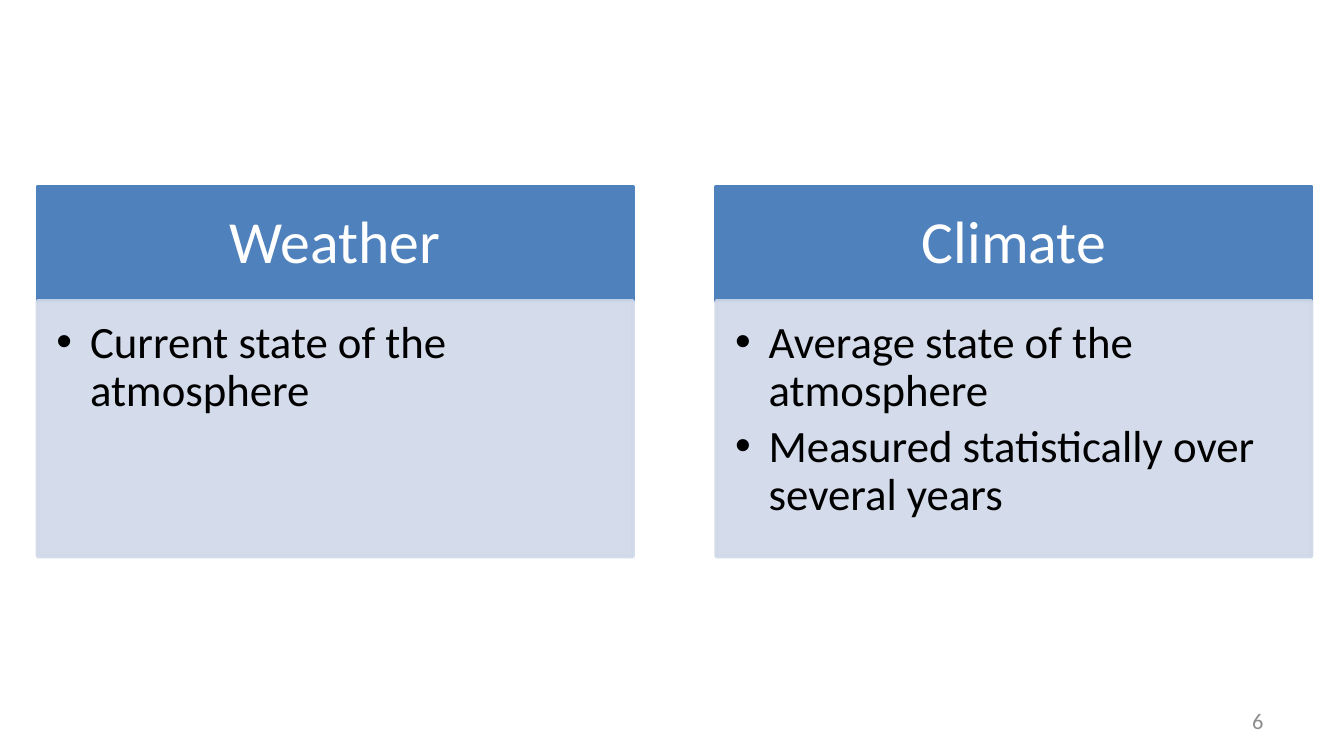
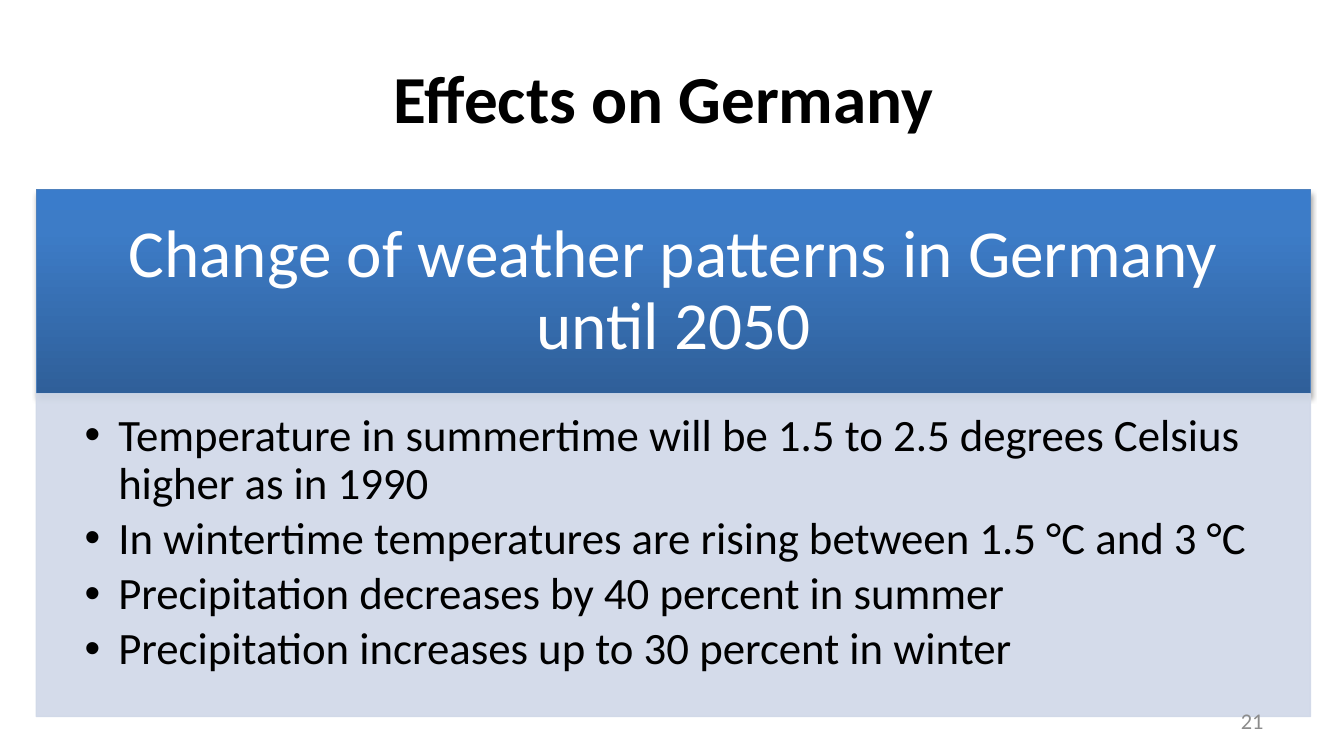
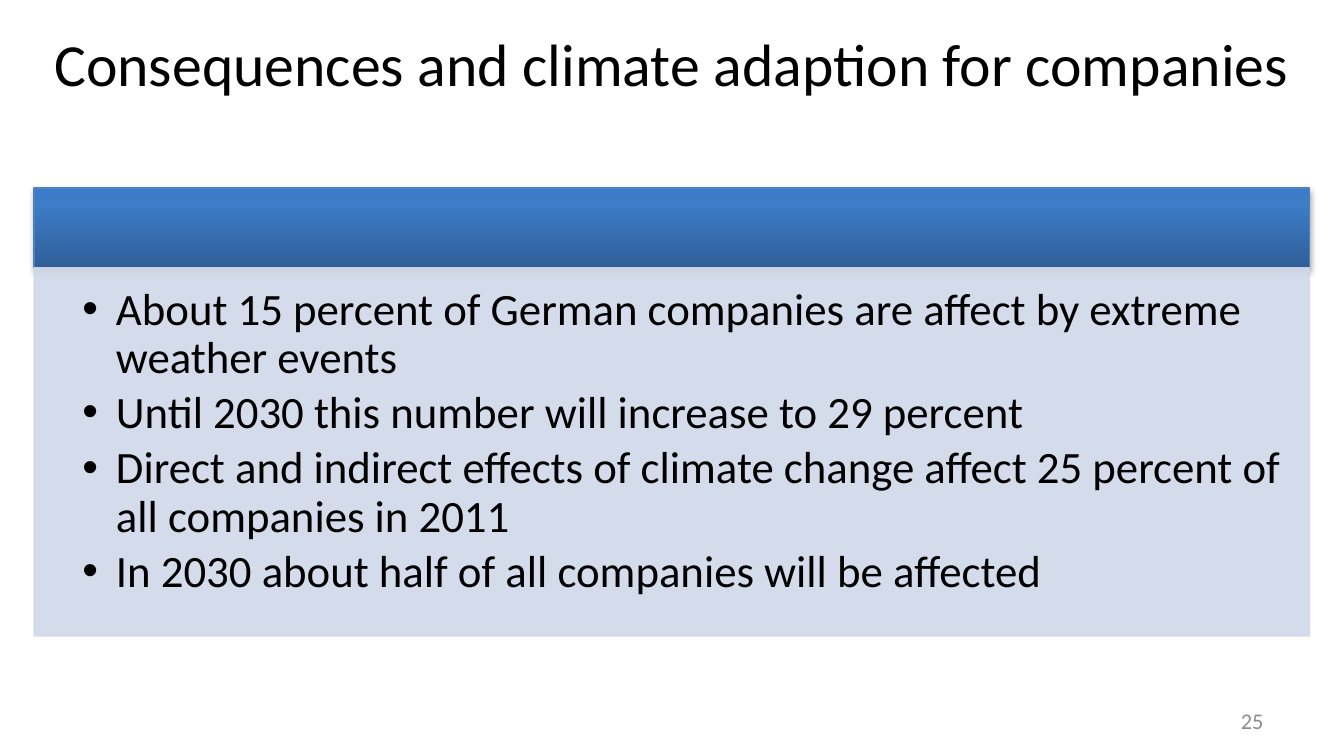
import copy

import lxml.etree
import pptx
import pptx.dml.color
import pptx.enum.shapes
import pptx.enum.text
import pptx.oxml.ns
import pptx.util

COLOURS = {
    "header": "4F81BD", "body": "D0D8E8", "black": "000000",
    "white": "FFFFFF", "number": "8C8C8C",
}
HEADER_GRADIENT = [(0, "2F5F99"), (0.8, "3D7CC7"), (1, "3A7CCB")]
FONT = "Calibri"
ALIGN = pptx.enum.text.PP_ALIGN
ANCHOR = pptx.enum.text.MSO_ANCHOR
RGB = pptx.dml.color.RGBColor.from_string
qn = pptx.oxml.ns.qn

deck = pptx.Presentation()
deck.slide_width = pptx.util.Inches(10)
deck.slide_height = deck.slide_width * 9 // 16
COLUMN = deck.slide_width / 100
ROW = deck.slide_height / 100


def place(left, top, width, height):
    return [round(left * COLUMN), round(top * ROW), round(width * COLUMN), round(height * ROW)]


def write(shape, lines, size, colour, align, anchor=ANCHOR.TOP, insets=(0.1, 0.05, 0.1, 0.05),
          spacing=1, after=0, bold=False, bullets=False):
    frame = shape.text_frame
    frame.word_wrap = True
    frame.vertical_anchor = anchor
    frame.margin_left, frame.margin_top, frame.margin_right, frame.margin_bottom = map(
        pptx.util.Inches, insets)
    frame.text = "\n".join(lines)
    for paragraph in frame.paragraphs:
        paragraph.alignment = align
        paragraph.line_spacing = spacing
        paragraph.space_after = pptx.util.Pt(after)
        paragraph.font.name = FONT
        paragraph.font.size = pptx.util.Pt(size)
        paragraph.font.bold = bold
        paragraph.font.color.rgb = RGB(COLOURS[colour])
        if bullets:
            properties = paragraph._p.get_or_add_pPr()
            indent = pptx.util.Inches(0.25)
            properties.set("marL", str(indent))
            properties.set("indent", str(-indent))
            lxml.etree.SubElement(properties, qn("a:buFont")).set("typeface", "Arial")
            lxml.etree.SubElement(properties, qn("a:buChar")).set("char", "•")
            properties.append(properties.find(qn("a:defRPr")))


pages = [
    {
        "number": "6", "title": None, "gradient": False, "line": 2,
        "header_size": 32, "header_insets": (0.25, 0.14, 0.25, 0.14), "body_inset": 0.14,
        "top": 24.71, "width": 44.3, "header_height": 15.11, "body_height": 33.8,
        "topics": [
            (2.8, "Weather", ["Current state of the atmosphere"]),
            (53.3, "Climate", ["Average state of the atmosphere",
                               "Measured statistically over several years"]),
        ],
    },
    {
        "number": "21", "title": "Effects on Germany", "title_box": (1.2, 6.58, 96.4, 12.62),
        "title_size": 36, "title_bold": True, "gradient": True, "line": 0.75,
        "header_size": 36, "header_insets": (0.28, 0.16, 0.28, 0.16), "body_inset": 0.36,
        "top": 25.07, "width": 94.8, "header_height": 27.02, "body_height": 42.7,
        "topics": [
            (2.7, "Change of weather patterns in Germany until 2050", [
                "Temperature in summertime will be 1.5 to 2.5 degrees Celsius higher as in 1990",
                "In wintertime temperatures are rising between 1.5 °C and 3 °C",
                "Precipitation decreases by 40 percent in summer",
                "Precipitation increases up to 30 percent in winter",
            ]),
        ],
    },
    {
        "number": "25", "title": "Consequences and climate adaption for companies",
        "title_box": (0, 2.67, 100, 11.38), "title_size": 32, "title_bold": False,
        "gradient": True, "line": 0.75, "body_inset": 0.36,
        "top": 24.87, "width": 94.9, "header_height": 10.55, "body_height": 48.71,
        "topics": [
            (2.53, None, [
                "About 15 percent of German companies are affect by extreme weather events",
                "Until 2030 this number will increase to 29 percent",
                "Direct and indirect effects of climate change affect 25 percent of all"
                " companies in 2011",
                "In 2030 about half of all companies will be affected",
            ]),
        ],
    },
]

for page in pages:
    slide = deck.slides.add_slide(deck.slide_layouts[6])

    for left, heading, points in page["topics"]:
        body_top = page["top"] + page["header_height"]
        header, body = [
            slide.shapes.add_shape(pptx.enum.shapes.MSO_SHAPE.RECTANGLE,
                                   *place(left, top, page["width"], height))
            for top, height in [(page["top"], page["header_height"]),
                                (body_top, page["body_height"])]
        ]
        for part, colour in [(header, "header"), (body, "body")]:
            part.shadow.inherit = False
            part.fill.solid()
            part.fill.fore_color.rgb = RGB(COLOURS[colour])
            part.line.color.rgb = RGB(COLOURS[colour])
            part.line.width = pptx.util.Pt(page["line"])

        for tint in body._element.spPr.iter(qn("a:srgbClr")):
            lxml.etree.SubElement(tint, qn("a:alpha")).set("val", "90000")

        if page["gradient"]:
            header.fill.gradient()
            header.fill.gradient_angle = 90
            stops = header._element.spPr.find(qn("a:gradFill")).find(qn("a:gsLst"))
            stops.append(copy.deepcopy(stops[-1]))
            for stop, (position, colour) in zip(header.fill.gradient_stops, HEADER_GRADIENT):
                stop.position = position
                stop.color.rgb = RGB(colour)
            effects = header._element.spPr.find(qn("a:effectLst"))
            shadow = lxml.etree.SubElement(
                effects, qn("a:outerShdw"), blurRad=str(pptx.util.Pt(3.1)),
                dist=str(pptx.util.Pt(1.8)), dir="5400000", rotWithShape="0")
            shade = lxml.etree.SubElement(shadow, qn("a:srgbClr"), val=COLOURS["black"])
            lxml.etree.SubElement(shade, qn("a:alpha"), val="35000")

        if heading:
            write(header, [heading], page["header_size"], "white", ALIGN.CENTER, ANCHOR.MIDDLE,
                  page["header_insets"], spacing=0.9)
        write(body, points, 24, "black", ALIGN.LEFT,
              insets=(page["body_inset"], 0.14, 0.19, 0.21), spacing=0.9, after=3.6, bullets=True)

    if page["title"]:
        title = slide.shapes.add_textbox(*place(*page["title_box"]))
        write(title, [page["title"]], page["title_size"], "black", ALIGN.CENTER,
              bold=page["title_bold"])

    number = slide.shapes.add_textbox(*place(71.7, 92.69, 23.3, 5.33))
    write(number, [page["number"]], 12, "number", ALIGN.RIGHT, ANCHOR.MIDDLE)

deck.save("out.pptx")
